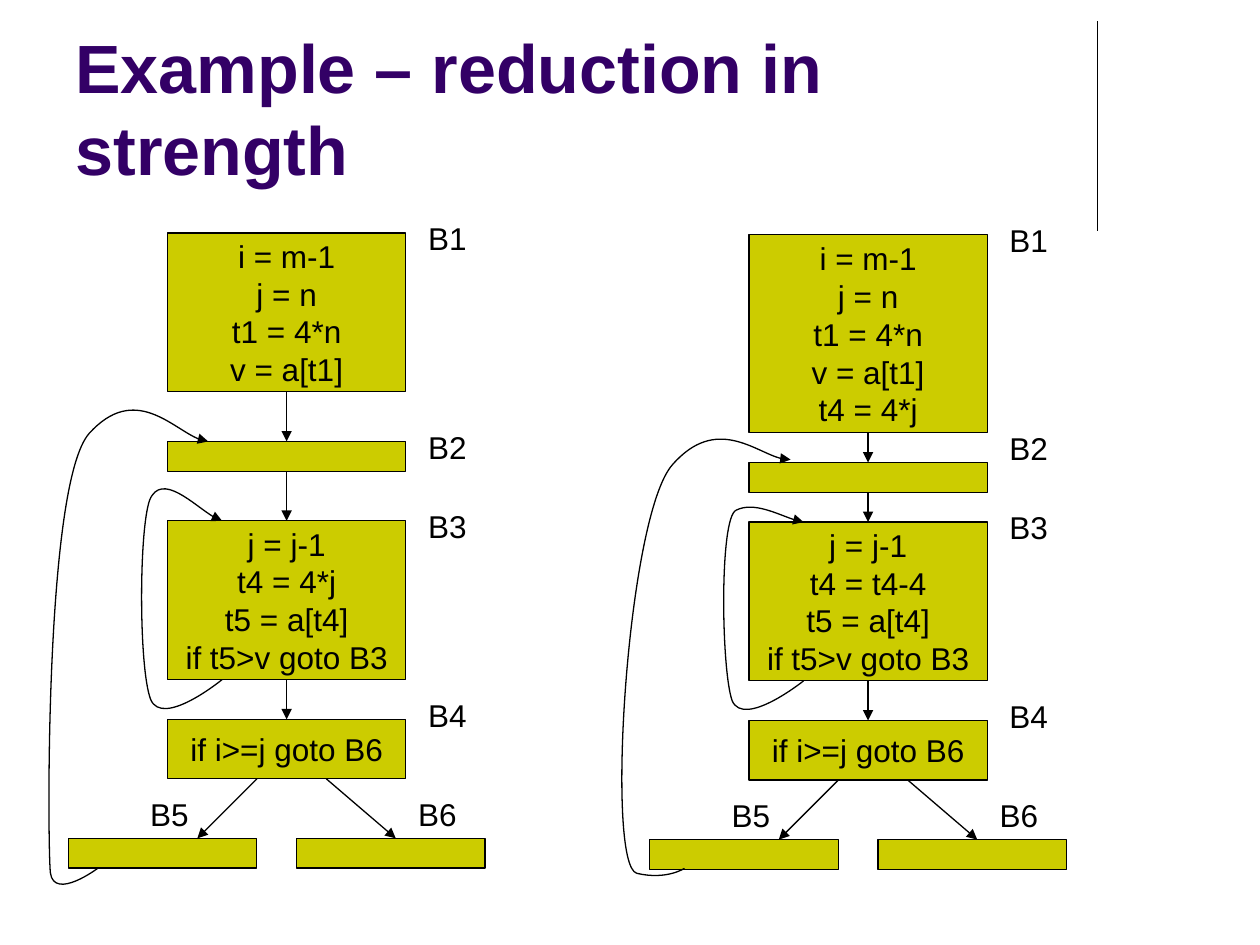
from dataclasses import dataclass

from lxml.etree import SubElement
from pptx import Presentation
from pptx.dml.color import RGBColor
from pptx.enum.shapes import MSO_CONNECTOR, MSO_SHAPE
from pptx.enum.text import MSO_ANCHOR as Anchor, MSO_AUTO_SIZE as AutoSize, PP_ALIGN as Align
from pptx.oxml.ns import qn
from pptx.util import Inches, Pt

Point = tuple[float, float]


@dataclass(frozen=True)
class Theme:
    font: str = "Arial"
    title: RGBColor = RGBColor(0x33, 0x00, 0x66)
    ink: RGBColor = RGBColor(0x00, 0x00, 0x00)
    block: RGBColor = RGBColor(0xCC, 0xCC, 0x00)
    title_size: int = 39
    body_size: int = 18
    line_width: float = 0.75


@dataclass(frozen=True)
class Block:
    """A basic block in grid cells, with the cell where its label starts."""
    name: str
    column: int
    row: int
    columns: int
    rows: int
    label: Point
    code: str = ""


@dataclass(frozen=True)
class Flow:
    """A flow graph; each loop is a start point and then Bezier triples."""
    left: float
    top: float
    blocks: list[Block]
    loops: list[list[Point]]

    def place(self, column: float, row: float) -> tuple[int, int]:
        return Inches(self.left + column * CELL), Inches(self.top + row * CELL)


THEME = Theme()
CELL = 1.89 / 24
WIDE, NARROW = 24, 19
LEFT = 1.33
FLOW_STEP = 58.6 * CELL


def make_blocks(setup: str, setup_rows: int, b2_row: int, update: str) -> list[Block]:
    return [
        Block("B1", 0, 0, WIDE, setup_rows, (25, -2), setup),
        Block("B2", 0, b2_row, WIDE, 3, (25, 19)),
        Block("B3", 0, 29, WIDE, 16, (25, 27), f"j = j-1\n{update}\nt5 = a[t4]\nif t5>v goto B3"),
        Block("B4", 0, 49, WIDE, 6, (25, 46), "if i>=j goto B6"),
        Block("B5", -10, 61, NARROW, 3, (-3, 56)),
        Block("B6", 13, 61, NARROW, 3, (24, 56)),
    ]


SETUP = "i = m-1\nj = n\nt1 = 4*n\nv = a[t1]"
FLOWS = [
    Flow(LEFT, 1.85, make_blocks(SETUP, 16, 21, "t4 = 4*j"), [
        [(5.5, 45), (5.5, 45), (-0.5, 49.9), (-1.7, 47), (-2.9, 43.9), (-2.9, 30),
         (-1.8, 26.9), (-0.6, 24), (3.9, 28.6), (5.5, 29)],
        [(-7, 64), (-7, 64), (-11.4, 67.3), (-11.8, 64.5), (-12.1, 61.8), (-12.4, 25.3),
         (-7.9, 20.2), (-3.3, 15.1), (1.5, 20.8), (4.1, 21)],
    ]),
    Flow(LEFT + FLOW_STEP, 1.86, make_blocks(SETUP + "\nt4 = 4*j", 20, 23, "t4 = t4-4"), [
        [(5.5, 45), (5.5, 45), (-0.5, 49.8), (-1.7, 47), (-2.8, 43.9), (-3, 28.6),
         (-1.3, 27.8), (0.5, 26.9), (4.1, 28.8), (5.5, 29)],
        [(-6.5, 63.9), (-6.5, 63.9), (-8.3, 65.1), (-11.3, 64.4), (-14.5, 63.6), (-12.3, 28.3),
         (-7.7, 23.2), (-3.3, 18.2), (1.8, 22.9), (4.2, 22.7)],
    ]),
]


def write(shape, text: str, *, size: float = THEME.body_size, color: RGBColor = THEME.ink,
          bold: bool = False, align: Align = Align.LEFT, anchor: Anchor = Anchor.TOP,
          wrap: bool = False, grow: bool = False) -> None:
    frame = shape.text_frame
    frame.word_wrap = wrap
    frame.vertical_anchor = anchor
    frame.auto_size = AutoSize.SHAPE_TO_FIT_TEXT if grow else AutoSize.NONE
    for index, line in enumerate(text.split("\n")):
        para = frame.add_paragraph() if index else frame.paragraphs[0]
        para.alignment = align
        span = para.add_run()
        span.text = line
        span.font.name, span.font.size, span.font.bold = THEME.font, Pt(size), bold
        span.font.color.rgb = color


def outline(shape, arrow: bool = False) -> None:
    shape.line.color.rgb = THEME.ink
    shape.line.width = Pt(THEME.line_width)
    properties = shape.element.spPr
    if arrow:
        SubElement(properties.find(qn("a:ln")), qn("a:tailEnd"), type="triangle")
    SubElement(properties, qn("a:effectLst"))


def draw_line(slide, start: tuple[int, int], end: tuple[int, int], arrow: bool = False) -> None:
    outline(slide.shapes.add_connector(MSO_CONNECTOR.STRAIGHT, *start, *end), arrow)


def draw_block(slide, flow: Flow, block: Block) -> None:
    box = slide.shapes.add_shape(MSO_SHAPE.RECTANGLE, *flow.place(block.column, block.row),
                                 Inches(block.columns * CELL), Inches(block.rows * CELL))
    box.fill.solid()
    box.fill.fore_color.rgb = THEME.block
    outline(box)
    if block.code:
        write(box, block.code, align=Align.CENTER, anchor=Anchor.MIDDLE)
    label = slide.shapes.add_textbox(*flow.place(*block.label), Inches(0.51), Inches(0.4))
    write(label, block.name, grow=True)


def bend(curve) -> None:
    """Turn each three straight segments of a freeform into one Bezier segment."""
    segments = list(curve.element.iter(qn("a:lnTo")))
    contour = segments[0].getparent()
    for first in range(0, len(segments), 3):
        bezier = SubElement(contour, qn("a:cubicBezTo"))
        for segment in segments[first:first + 3]:
            bezier.append(segment[0])
            contour.remove(segment)


def draw_loop(slide, flow: Flow, knots: list[Point]) -> None:
    start, *others = (flow.place(*knot) for knot in knots)
    builder = slide.shapes.build_freeform(*start)
    builder.add_line_segments(others, close=False)
    curve = builder.convert_to_shape()
    bend(curve)
    curve.fill.background()
    outline(curve, arrow=True)


def draw_flow(slide, flow: Flow) -> None:
    for block in flow.blocks:
        draw_block(slide, flow, block)
    trunk = flow.blocks[:4]
    middle = WIDE / 2
    edges = [((middle, upper.row + upper.rows), (middle, lower.row))
             for upper, lower in zip(trunk, trunk[1:])]
    edges += [((9, 55), (3, 61)), ((16, 55), (23, 61))]
    for start, end in edges:
        draw_line(slide, flow.place(*start), flow.place(*end), arrow=True)
    for loop in flow.loops:
        draw_loop(slide, flow, loop)


def main() -> None:
    deck = Presentation()
    deck.slide_width, deck.slide_height = Inches(10), Inches(7.5)
    slide = deck.slides.add_slide(deck.slide_layouts[6])
    draw_line(slide, (Inches(8.71), Inches(0.17)), (Inches(8.71), Inches(1.83)))
    title = slide.shapes.add_textbox(Inches(0.5), Inches(0.13), Inches(8.25), Inches(1.42))
    write(title, "Example – reduction in strength", size=THEME.title_size, color=THEME.title,
          bold=True, anchor=Anchor.BOTTOM, wrap=True)
    for flow in FLOWS:
        draw_flow(slide, flow)
    deck.save("out.pptx")


if __name__ == "__main__":
    main()
